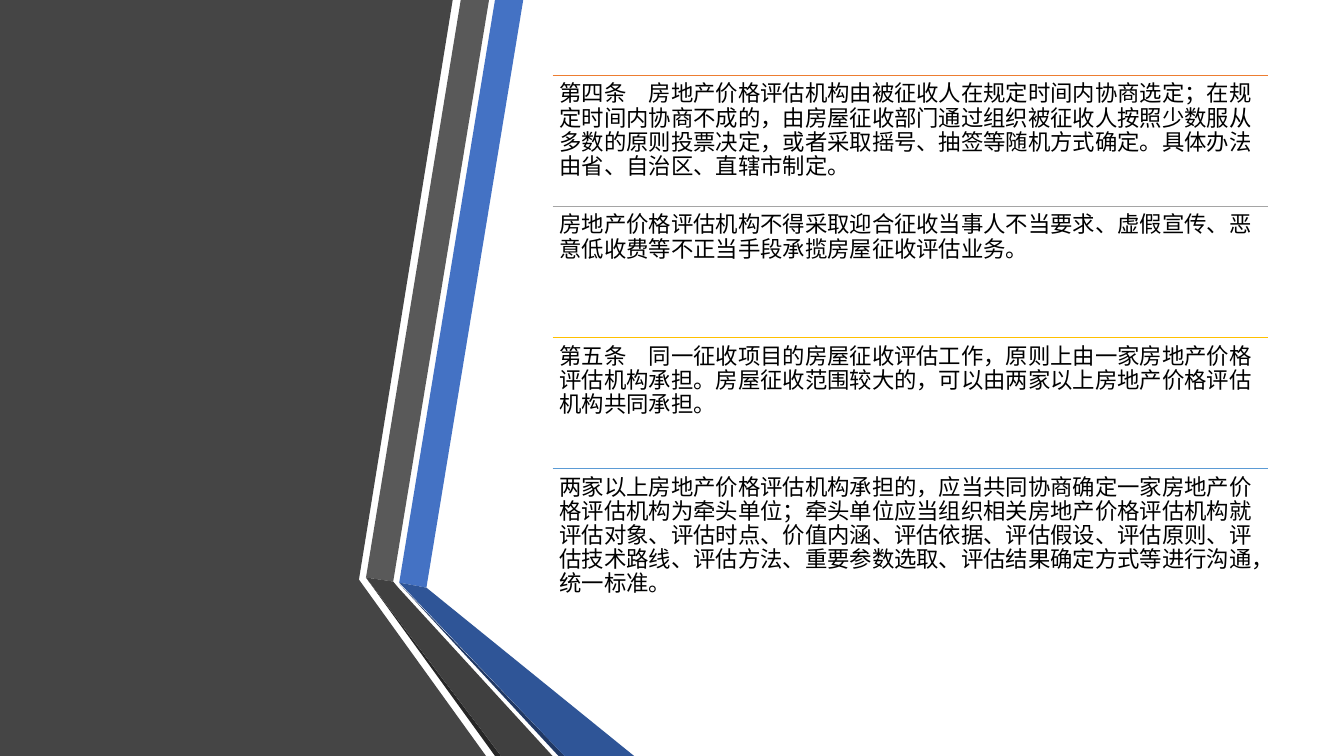
"""Build a slide of four ruled legal clauses beside a folded ribbon."""
from dataclasses import dataclass

from lxml.etree import SubElement
from pptx import Presentation
from pptx.dml.color import RGBColor
from pptx.enum.shapes import MSO_CONNECTOR as Connector
from pptx.enum.text import MSO_ANCHOR as Anchor
from pptx.oxml.ns import qn
from pptx.util import Inches, Pt


@dataclass(frozen=True)
class Theme:
    """Colours, font and type size of the slide."""
    panel: str = "454545"
    blue: str = "4472C4"
    blue_fold: str = "2F5597"
    blue_edge: str = "203864"
    gray: str = "595959"
    gray_fold: str = "404040"
    gray_edge: str = "262626"
    rules: tuple = ("ED7D31", "A5A5A5", "FFC000", "5B9BD5")
    ink: str = "000000"
    font: str = "Noto Sans CJK SC"
    body: int = 16


THEME = Theme()
CLAUSE_LEFT, CLAUSE_TOP = 5.48, 0.75
CLAUSE_WIDTH, CLAUSE_STEP = 7.1, 1.3

RIBBON = (
    (THEME.panel, [(0, 0), (4.49, 0), (3.56, 5.75), (4.82, 7.5), (0, 7.5)]),
    (THEME.blue, [(3.96, 5.78), (4.23, 5.83), (5.19, 0), (4.91, 0)]),
    (THEME.gray, [(4.85, 0), (4.57, 0), (3.63, 5.73), (3.9, 5.77)]),
    (THEME.gray_edge, [(3.63, 5.73), (4.91, 7.5), (4.97, 7.5)]),
    (THEME.blue_edge, [(3.96, 5.79), (5.54, 7.5), (5.6, 7.5)]),
    (THEME.blue_fold, [(3.96, 5.78), (5.6, 7.5), (6.29, 7.5), (4.23, 5.83)]),
    (THEME.gray_fold, [(3.63, 5.73), (4.97, 7.5), (5.48, 7.5), (3.95, 5.83),
                       (3.9, 5.77)]),
)

CLAUSES = (
    "第四条　房地产价格评估机构由被征收人在规定时间内协商选定；在规定时间内协商不成的，"
    "由房屋征收部门通过组织被征收人按照少数服从多数的原则投票决定，或者采取摇号、抽签等"
    "随机方式确定。具体办法由省、自治区、直辖市制定。",
    "房地产价格评估机构不得采取迎合征收当事人不当要求、虚假宣传、恶意低收费等不正当手段"
    "承揽房屋征收评估业务。",
    "第五条　同一征收项目的房屋征收评估工作，原则上由一家房地产价格评估机构承担。"
    "房屋征收范围较大的，可以由两家以上房地产价格评估机构共同承担。",
    "两家以上房地产价格评估机构承担的，应当共同协商确定一家房地产价格评估机构为牵头单位；"
    "牵头单位应当组织相关房地产价格评估机构就评估对象、评估时点、价值内涵、评估依据、"
    "评估假设、评估原则、评估技术路线、评估方法、重要参数选取、评估结果确定方式等进行沟通，"
    "统一标准。",
)


def add_polygon(page, points, color):
    """Draw a closed filled outline through points given in inches."""
    corners = [(Inches(x), Inches(y)) for x, y in points]
    builder = page.shapes.build_freeform(*corners[0])
    builder.add_line_segments(corners[1:], close=True)
    shape = builder.convert_to_shape()
    shape.shadow.inherit = False
    shape.fill.solid()
    shape.fill.fore_color.rgb = RGBColor.from_string(color)
    shape.line.fill.background()


def add_rule(page, left, top, width, color):
    """Draw a thin horizontal line."""
    rule = page.shapes.add_connector(
        Connector.STRAIGHT, Inches(left), Inches(top),
        Inches(left + width), Inches(top))
    rule.line.color.rgb = RGBColor.from_string(color)
    rule.line.width = Pt(1)
    SubElement(rule._element.spPr, qn("a:effectLst"))


def add_text(page, text, left, top, width, height, *, size=THEME.body,
             color=THEME.ink, font=THEME.font, inset=0.07, spacing=0.9):
    """Place a wrapped paragraph in a text box."""
    box = page.shapes.add_textbox(
        Inches(left), Inches(top), Inches(width), Inches(height))
    frame = box.text_frame
    frame.word_wrap = True
    frame.vertical_anchor = Anchor.TOP
    frame.margin_left = frame.margin_right = Inches(inset)
    frame.margin_top = frame.margin_bottom = Inches(inset)
    para = frame.paragraphs[0]
    para.line_spacing = spacing
    span = para.add_run()
    span.text = text
    span.font.size = Pt(size)
    span.font.name = font
    span.font.color.rgb = RGBColor.from_string(color)
    properties = span._r.get_or_add_rPr()
    properties.set("lang", "zh-CN")
    SubElement(properties, qn("a:ea"), typeface=font)


def main():
    """Build and save the slide."""
    deck = Presentation()
    deck.slide_width, deck.slide_height = Inches(13.33), Inches(7.5)
    page = deck.slides.add_slide(deck.slide_layouts[6])
    for color, points in RIBBON:
        add_polygon(page, points, color)
    for index, (clause, color) in enumerate(zip(CLAUSES, THEME.rules)):
        top = CLAUSE_TOP + index * CLAUSE_STEP
        height = 1.69 if clause == CLAUSES[-1] else CLAUSE_STEP
        add_rule(page, CLAUSE_LEFT, top, CLAUSE_WIDTH, color)
        add_text(page, clause, CLAUSE_LEFT, top, CLAUSE_WIDTH, height)
    deck.save("out.pptx")


if __name__ == "__main__":
    main()
